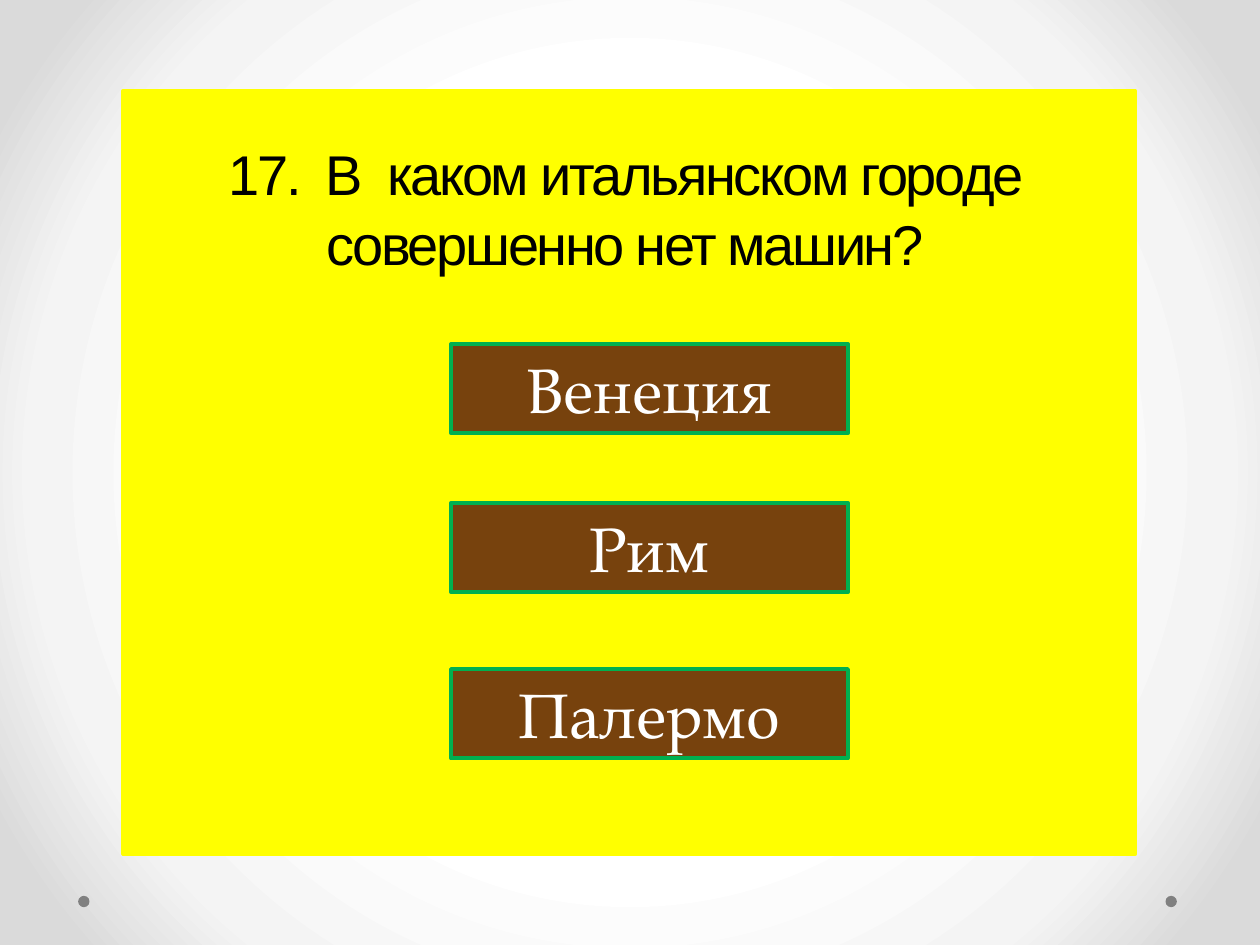
from lxml import etree
from pptx import Presentation
from pptx.dml.color import RGBColor
from pptx.enum.shapes import MSO_SHAPE
from pptx.enum.text import MSO_ANCHOR, MSO_AUTO_SIZE, PP_ALIGN
from pptx.oxml import parse_xml
from pptx.oxml.ns import nsdecls, qn
from pptx.util import Inches, Pt

RECT, OVAL = MSO_SHAPE.RECTANGLE, MSO_SHAPE.OVAL
CENTER = PP_ALIGN.CENTER
TOP, MIDDLE = MSO_ANCHOR.TOP, MSO_ANCHOR.MIDDLE

BLACK = RGBColor(0x00, 0x00, 0x00)
WHITE = RGBColor(0xFF, 0xFF, 0xFF)
GRAY = RGBColor(0x80, 0x80, 0x80)
YELLOW = RGBColor(0xFF, 0xFF, 0x00)
BROWN = RGBColor(0x77, 0x42, 0x0D)
GREEN = RGBColor(0x00, 0xB0, 0x50)

# Content
QUESTION = "17.  В  каком итальянском городе совершенно нет машин?"
ANSWERS = [("Венеция", 2.73), ("Рим", 3.99), ("Палермо", 5.31)]  # text, top
DOT_LEFTS = [9.25, 0.62]
BACKGROUND_STOPS = [(50, WHITE), (76, RGBColor(0xF4, 0xF4, 0xF4)),
                    (92, RGBColor(0xDA, 0xDA, 0xDA))]
QUESTION_FONT = {"name": "Arial", "size": Pt(32)}
ANSWER_FONT = {"name": "TeX Gyre Pagella", "size": Pt(36)}


def set_background(slide, stops):
    """Circular gradient spreading from the slide centre."""
    slide.background.fill.solid()
    solid = slide.element.find(".//" + qn("p:bgPr")).find(qn("a:solidFill"))
    grad = parse_xml(f'<a:gradFill {nsdecls("a")} rotWithShape="1"><a:gsLst/>'
                     '<a:path path="circle"><a:fillToRect l="50000" t="50000" '
                     'r="50000" b="50000"/></a:path></a:gradFill>')
    for percent, color in stops:
        gs = etree.SubElement(grad[0], qn("a:gs"), pos=str(percent * 1000))
        etree.SubElement(gs, qn("a:srgbClr"), val=str(color))
    solid.getparent().replace(solid, grad)


def add_box(slide, kind, box, fill, line=None):
    sp = slide.shapes.add_shape(kind, *map(Inches, box))
    sp.shadow.inherit = False
    sp.fill.solid()
    sp.fill.fore_color.rgb = fill
    if line is None:
        sp.line.fill.background()
    else:
        sp.line.color.rgb = line
        sp.line.width = Pt(2.25)
    return sp


def write(sp, text, font, color, anchor):
    tf = sp.text_frame
    tf.word_wrap = True
    tf.vertical_anchor = anchor
    p = tf.paragraphs[0]
    p.alignment = CENTER
    r = p.add_run()
    r.text = text
    for key, value in font.items():
        setattr(r.font, key, value)
    r.font.color.rgb = color
    return p, r


prs = Presentation()
prs.slide_width, prs.slide_height = Inches(10), Inches(7.5)
slide = prs.slides.add_slide(prs.slide_layouts[5])
set_background(slide, BACKGROUND_STOPS)

# Corner dots and yellow panel
for left in DOT_LEFTS:
    add_box(slide, OVAL, (left, 7.11, 0.09, 0.09), GRAY)
add_box(slide, RECT, (0.98, 0.72, 8.03, 6.06), YELLOW, YELLOW)

# Answers
for answer, top in ANSWERS:
    sp = add_box(slide, RECT, (3.58, top, 3.15, 0.71), BROWN, GREEN)
    write(sp, answer, ANSWER_FONT, WHITE, MIDDLE)

# Question, brought in front of the panel
title = slide.shapes.title
title.left, title.top, title.width, title.height = map(
    Inches, (1.3, 1.03, 7.32, 1.18))
p, r = write(title, QUESTION, QUESTION_FONT, BLACK, TOP)
title.text_frame.auto_size = MSO_AUTO_SIZE.SHAPE_TO_FIT_TEXT
p.line_spacing = 1.05
r.font.element.set("spc", "-140") if hasattr(r.font, "element") else \
    p.runs[0].font._element.set("spc", "-140") if hasattr(r.font, "_element") else \
    title.element.find(".//" + qn("a:rPr")).set("spc", "-140")
slide.shapes.element.append(title.element)

prs.save("out.pptx")
